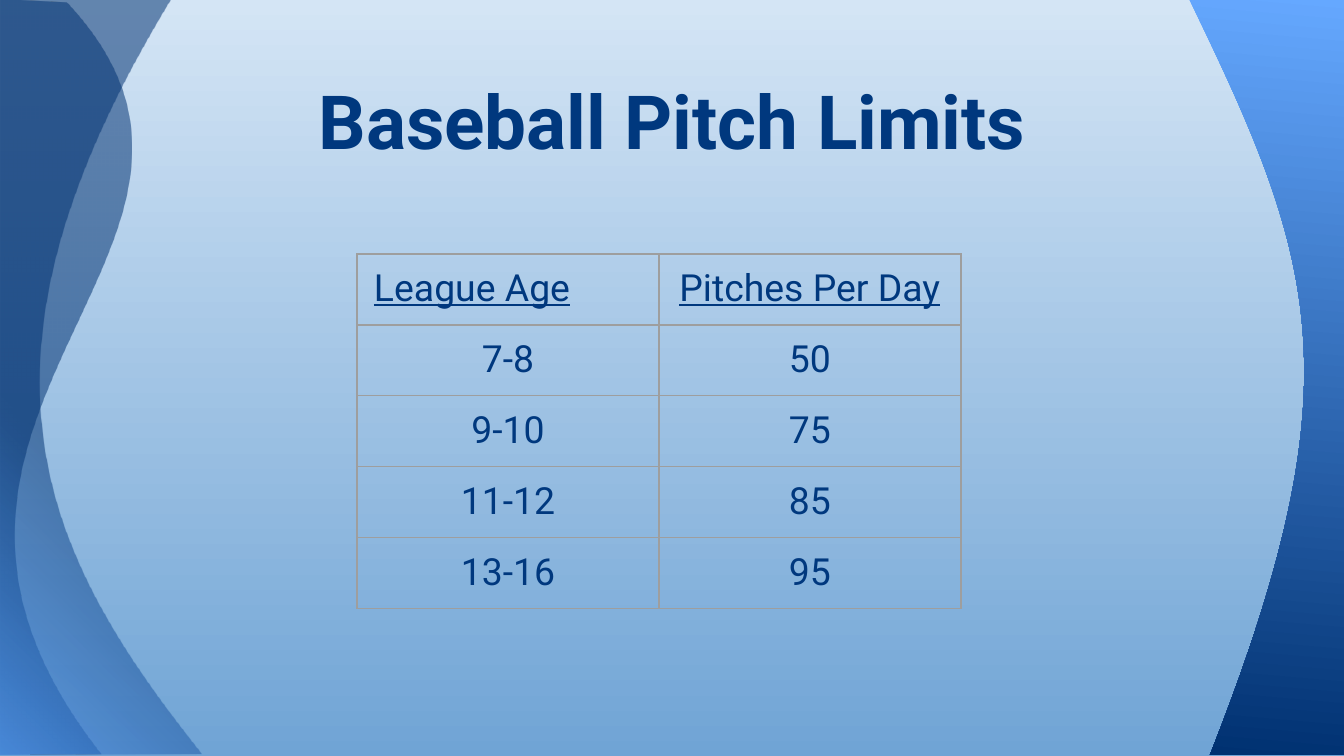
from pptx import Presentation
from pptx.dml.color import RGBColor as RGB
from pptx.enum.text import MSO_ANCHOR as Anchor, PP_ALIGN as Align
from pptx.oxml import parse_xml as to_xml
from pptx.oxml.ns import nsdecls, qn
from pptx.oxml.xmlchemy import OxmlElement as Node
from pptx.util import Emu, Pt

PX = 9144000 / 1344
FONT = "Roboto"
COLS = {
    "ink": "00387E", "rule": "9E9E9E",
    "pale": "D4E5F5", "mist": "70A4D5",
    "sky": "549FFF", "navy": "003171", "azure": "65A8FF",
}
GLOW = [(0, "sky"), (41, "navy"), (100, "navy")]
CORNER = '<a:path path="circle"><a:fillToRect t="100000" r="100000"/></a:path>'
ROWS = [
    ("League Age", "Pitches Per Day"),
    ("7-8", "50"), ("9-10", "75"), ("11-12", "85"), ("13-16", "95"),
]
WAVES = [
    [(202, 754), (-1, 755), [(-1, 503), (0, 250), (0, -3)], (171, 0),
     [(-51, 366), (44, 555), (202, 754)]],
    [(101, 754), (1, 755), [(1, 504), (1, 253), (1, 0)], (67, 3),
     [(292, 245), (-164, 414), (101, 754)]],
]
EDGE = [(162, 756), (21, 756), [(168, 383), (129, 264), (0, 0)], (162, 0)]


def px(num):
    """Turn px into EMU."""
    return Emu(round(num * PX))


def put(obj, vals):
    """Set attributes from a dict."""
    for name, val in vals.items():
        setattr(obj, name, val)


def linear(deg):
    """Give the XML of a linear gradient direction."""
    return f'<a:lin ang="{deg * 60000}" scaled="0"/>'


def shade(fill, root, stops, way, alpha=100):
    """Fill with gradient stops of (percent, colour name)."""
    fill.gradient()
    old = next(root.iter(qn("a:gradFill")))
    marks = "".join(
        f'<a:gs pos="{pos * 1000}"><a:srgbClr val="{COLS[name]}">'
        f'<a:alpha val="{alpha * 1000}"/></a:srgbClr></a:gs>'
        for pos, name in stops)
    new = to_xml(f'<a:gradFill {nsdecls("a")}><a:gsLst>{marks}</a:gsLst>'
                 f'{way}</a:gradFill>')
    old.getparent().replace(old, new)


def curve(slide, left, top, steps):
    """Draw a closed outline where a list step is a Bezier curve."""
    start, *rest = steps
    flat = [pt for step in rest
            for pt in (step if isinstance(step, list) else [step])]
    pen = slide.shapes.build_freeform(*start, scale=PX)
    pen.add_line_segments(flat, close=True)
    shape = pen.convert_to_shape(px(left), px(top))
    lines = iter(list(shape.element.iter(qn("a:lnTo"))))
    for step in rest:
        line = next(lines)
        if isinstance(step, list):
            bend = Node("a:cubicBezTo")
            line.addprevious(bend)
            for part in (line, next(lines), next(lines)):
                bend.append(part[0])
                part.getparent().remove(part)
    shape.shadow.inherit = False
    shape.line.fill.background()
    return shape


def sides(slide, left, top, wide):
    """Draw the left waves and the right edge."""
    for steps in WAVES:
        wave = curve(slide, left, top, steps)
        shade(wave.fill, wave.element, GLOW, CORNER, 53)
    edge = curve(slide, left + wide - 155, top - 1, EDGE)
    shade(edge.fill, edge.element, [(0, "azure"), (100, "navy")], linear(95))


def write(frame, text, size, **more):
    """Write one centred paragraph."""
    para = frame.paragraphs[0]
    para.alignment = Align.CENTER
    run = para.add_run()
    run.text = text
    put(run.font, {"name": FONT, "size": Pt(size), **more})
    run.font.color.rgb = RGB.from_string(COLS["ink"])
    return para


def title(slide, left, top, wide, high):
    """Place the heading at the foot of its box."""
    box = slide.shapes.add_textbox(*map(px, (left, top, wide, high)))
    frame = box.text_frame
    put(frame, {"word_wrap": True, "vertical_anchor": Anchor.BOTTOM})
    put(frame, {f"margin_{side}": px(13)
                for side in ("left", "right", "top", "bottom")})
    write(frame, "Baseball Pitch Limits", 40, bold=True)


def border(cell):
    """Rule all four sides of a cell."""
    props = cell._tc.get_or_add_tcPr()
    for spot, side in enumerate("LRTB"):
        props.insert(spot, to_xml(
            f'<a:ln{side} {nsdecls("a")} w="9525"><a:solidFill>'
            f'<a:srgbClr val="{COLS["rule"]}"/></a:solidFill></a:ln{side}>'))


def limits(slide, left, top, wide, high):
    """Place the table of pitch limits."""
    size = len(ROWS), len(ROWS[0])
    grid = slide.shapes.add_table(
        *size, *map(px, (left, top, wide, high))).table
    put(grid, {"first_row": False, "horz_banding": False})
    for row, texts in enumerate(ROWS):
        for col, text in enumerate(texts):
            cell = grid.cell(row, col)
            put(cell, {f"margin_{side}": px(13)
                       for side in ("left", "right", "top", "bottom")})
            cell.fill.background()
            border(cell)
            para = write(cell.text_frame, text, 20, underline=row == 0)
            if (row, col) == (0, 0):
                para.alignment = Align.LEFT
                cell.margin_left = px(17)


def main():
    """Build and save the slide."""
    deck = Presentation()
    put(deck, {"slide_width": px(1344), "slide_height": px(756)})
    slide = deck.slides.add_slide(deck.slide_layouts[6])
    shade(slide.background.fill, slide.element,
          [(0, "pale"), (100, "mist")], linear(90))
    sides(slide, 0, 0, 1344)
    title(slide, 67, 31, 1210, 146)
    limits(slide, 357, 254, 604, 355)
    deck.save("out.pptx")


if __name__ == "__main__":
    main()
